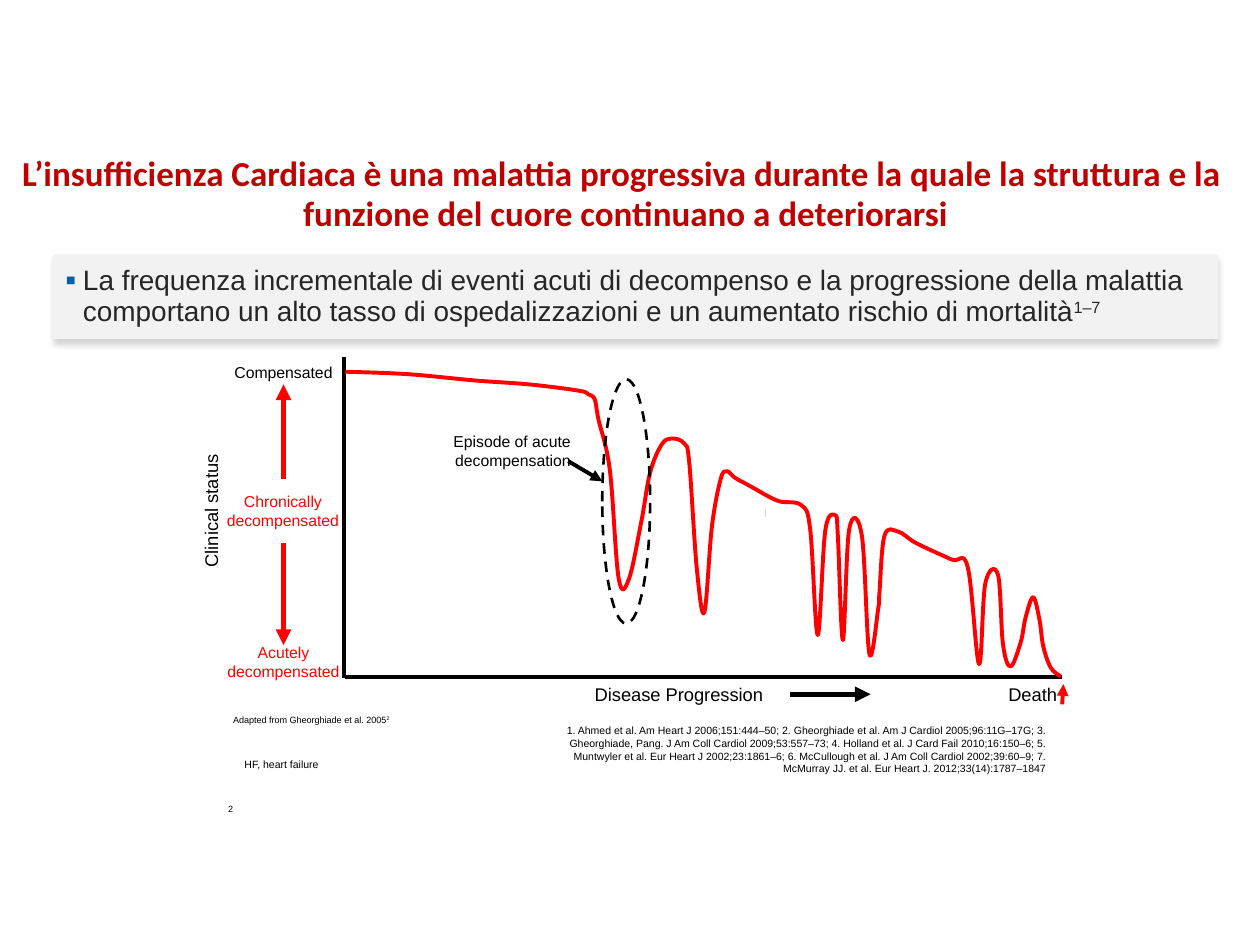
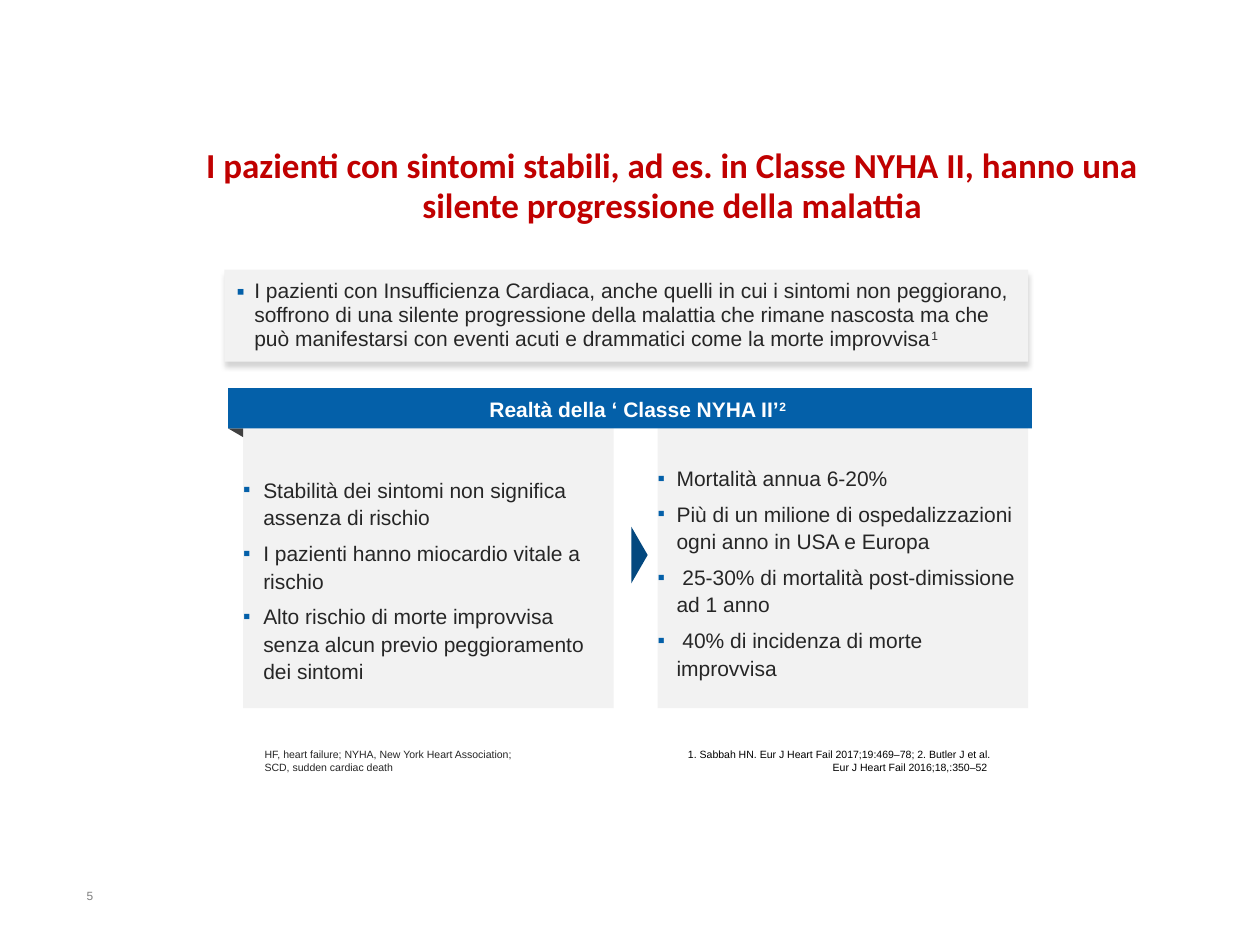
from lxml.etree import SubElement
from pptx import Presentation
from pptx.dml.color import RGBColor
from pptx.enum.dml import MSO_LINE_DASH_STYLE as Dash
from pptx.enum.shapes import MSO_CONNECTOR as Connector, MSO_SHAPE as Shape
from pptx.enum.text import MSO_ANCHOR as Anchor, MSO_AUTO_SIZE as AutoSize, PP_ALIGN as Align
from pptx.oxml.ns import qn
from pptx.util import Pt

PX = 9144
TITLE_ONLY = 5
BLACK, WHITE, RED = "000000", "FFFFFF", "FF0000"
TITLE_RED, BLUE, DARK_BLUE = "C00000", "0460A9", "03487F"
PANEL, INK, FOLD, TICK, NUMBER = "F2F2F2", "262626", "404040", "D9D9D9", "7F7F7F"

CLINICAL_COURSE = [
    (274, 295), (324, 297), (377, 302), (419, 305), (459, 310), (467, 313),
    (472, 317), (475, 333), (484, 373), (491, 459), (499, 460), (509, 414),
    (516, 375), (525, 353), (533, 348), (543, 352), (547, 367), (553, 451),
    (559, 486), (565, 418), (572, 380), (577, 374), (583, 379), (592, 384),
    (601, 389), (608, 393), (619, 398), (636, 401), (643, 420), (649, 504),
    (655, 421), (663, 409), (665, 426), (669, 508), (674, 420), (684, 425),
    (690, 519), (697, 483), (698, 470), (702, 425), (713, 422), (727, 431),
    (755, 444), (768, 450), (777, 527), (782, 463), (792, 456), (796, 511),
    (802, 529), (810, 510), (814, 490), (820, 474), (825, 492), (828, 513),
    (834, 530), (842, 537),
]


def px(*lengths):
    return [round(length * PX) for length in lengths]


def color(hex_code):
    return RGBColor.from_string(hex_code)


def add_bullet(paragraph, indent, percent):
    props = paragraph._p.get_or_add_pPr()
    props.set("marL", str(indent * PX))
    props.set("indent", str(-indent * PX))
    tint = SubElement(props, qn("a:buClr"))
    SubElement(tint, qn("a:srgbClr"), val=BLUE)
    SubElement(props, qn("a:buSzPct"), val=str(percent * 1000))
    SubElement(props, qn("a:buFont"), typeface="Arial")
    SubElement(props, qn("a:buChar"), char="▪")


def write(shape, text, size=9, hex_code=BLACK, font="Arial", bold=False,
          align=Align.LEFT, anchor=Anchor.TOP, margins=(0, 0), spacing=None,
          before=0, first_indent=0, bullet=0, bullet_percent=100):
    """Newline starts a paragraph, \\v breaks a line, ^ starts a superscript."""
    frame = shape.text_frame
    frame.word_wrap = True
    frame.auto_size = AutoSize.NONE
    frame.vertical_anchor = anchor
    frame.margin_left, frame.margin_top = px(*margins)
    frame.margin_right, frame.margin_bottom = px(*margins)
    for index, content in enumerate(text.split("\n")):
        paragraph = frame.add_paragraph() if index else frame.paragraphs[0]
        if bullet:
            add_bullet(paragraph, bullet, bullet_percent)
        elif first_indent:
            paragraph._p.get_or_add_pPr().set("indent", str(first_indent * PX))
        paragraph.alignment = align
        if spacing:
            paragraph.line_spacing = spacing
        if index:
            paragraph.space_before = Pt(before)
        for line_index, line in enumerate(content.split("\v")):
            if line_index:
                paragraph.add_line_break()
            for raised, part in enumerate(line.split("^")):
                run = paragraph.add_run()
                run.text = part
                run.font.size = Pt(size)
                run.font.name = font
                run.font.bold = bold
                run.font.color.rgb = color(hex_code)
                if raised:
                    run._r.get_or_add_rPr().set("baseline", "30000")


def add_label(slide, box, text, **style):
    label = slide.shapes.add_textbox(*px(*box))
    write(label, text, **style)
    return label


def add_title(slide, box, text):
    title = slide.shapes.title
    title.left, title.top, title.width, title.height = px(*box)
    write(title, text, size=20, hex_code=TITLE_RED, font="Calibri", bold=True,
          align=Align.CENTER, spacing=0.95)


def add_block(slide, box, fill, kind=Shape.RECTANGLE):
    block = slide.shapes.add_shape(kind, *px(*box))
    block.shadow.inherit = False
    block.fill.solid()
    block.fill.fore_color.rgb = color(fill)
    block.line.fill.background()
    return block


def add_key_message(slide, box, text, size):
    panel = add_block(slide, box, PANEL)
    effects = panel._element.spPr.find(qn("a:effectLst"))
    shadow = SubElement(effects, qn("a:outerShdw"), blurRad=str(Pt(3)), dist=str(Pt(3)),
                        dir="5400000", algn="t", rotWithShape="0")
    tint = SubElement(shadow, qn("a:srgbClr"), val=BLACK)
    SubElement(tint, qn("a:alpha"), val="16000")
    write(panel, text, size=size, hex_code=INK, margins=(10, 8), spacing=0.95,
          bullet=14, bullet_percent=110)


def add_line(slide, start, end, hex_code, width, arrow=False):
    line = slide.shapes.add_connector(Connector.STRAIGHT, *px(*start, *end))
    line.line.color.rgb = color(hex_code)
    line.line.width = Pt(width)
    if arrow:
        SubElement(line.line._get_or_add_ln(), qn("a:tailEnd"), type="triangle")
    SubElement(line._element.spPr, qn("a:effectLst"))


def add_outline(slide, points, close):
    start, *others = [px(*point) for point in points]
    builder = slide.shapes.build_freeform(*start)
    builder.add_line_segments(others, close=close)
    outline = builder.convert_to_shape()
    outline.shadow.inherit = False
    return outline


def smooth(outline):
    knots = [(int(pt.get("x")), int(pt.get("y"))) for pt in outline._element.iter(qn("a:pt"))]
    padded = [knots[0], *knots, knots[-1]]
    segments = list(outline._element.iter(qn("a:lnTo")))
    for segment, a, b, c, d in zip(segments, padded, padded[1:], padded[2:], padded[3:]):
        leaving = [q + (r - p) / 6 for p, q, r in zip(a, b, c)]
        arriving = [q - (r - p) / 6 for p, q, r in zip(b, c, d)]
        curve = segment.makeelement(qn("a:cubicBezTo"))
        for x, y in (leaving, arriving, c):
            SubElement(curve, qn("a:pt"), x=str(round(x)), y=str(round(y)))
        segment.getparent().replace(segment, curve)


def add_progression_diagram(slide):
    padded = {"margins": (4, 4)}
    status = add_label(slide, (78, 393, 178, 25), "Clinical status", size=10.5,
                       align=Align.CENTER, **padded)
    status.rotation = 270
    add_label(slide, (468, 538, 172, 25), "Disease Progression", size=10.5, **padded)
    add_label(slide, (741, 538, 102, 25), "Death", size=10.5, align=Align.RIGHT, **padded)
    for box, stage, hex_code in [
        ((171, 284, 108, 23), "Compensated", BLACK),
        ((160, 386, 129, 38), "Chronically\ndecompensated", RED),
        ((171, 506, 108, 38), "Acutely\ndecompensated", RED),
    ]:
        add_label(slide, box, stage, hex_code=hex_code, align=Align.CENTER, **padded)

    add_line(slide, (274, 537), (843, 537), BLACK, 2.25)
    add_line(slide, (273, 538), (273, 283), BLACK, 2.25)
    add_block(slide, (607, 404, 1, 6), TICK)
    course = add_outline(slide, CLINICAL_COURSE, close=False)
    smooth(course)
    course.fill.background()
    course.line.color.rgb = color(RED)
    course.line.width = Pt(2.25)

    episode = add_block(slide, (478, 301, 38, 194), WHITE, Shape.OVAL)
    episode.fill.background()
    episode.line.color.rgb = color(BLACK)
    episode.line.width = Pt(1.5)
    episode.line.dash_style = Dash.DASH
    add_label(slide, (333, 339, 124, 38), "Episode of acute decompensation",
              align=Align.RIGHT, **padded)

    for start, end, hex_code, width in [
        ((225, 380), (225, 305), RED, 3),
        ((225, 431), (225, 512), RED, 3),
        ((627, 551), (691, 551), BLACK, 3),
        ((843, 559), (844, 543), RED, 2.25),
        ((451, 366), (478, 382), BLACK, 2.25),
    ]:
        add_line(slide, start, end, hex_code, width, arrow=True)
    add_label(slide, (181, 563, 225, 16), "Adapted from Gheorghiade et al. 2005^2",
              size=5.2, **padded)


def build_progression_slide(slide):
    add_title(slide, (0, 123, 993, 79),
              "L’insufficienza Cardiaca è una malattia progressiva durante la quale la "
              "struttura e la \vfunzione del cuore continuano a deteriorarsi")
    add_key_message(slide, (42, 202, 925, 67),
                    "La frequenza incrementale di eventi acuti di decompenso e la progressione "
                    "della malattia comportano un alto tasso di ospedalizzazioni e un aumentato "
                    "rischio di mortalità^1–7", 16)
    add_progression_diagram(slide)
    add_label(slide, (194, 602, 231, 10), "HF, heart failure", size=6)
    add_label(slide, (441, 575, 389, 40),
              "1. Ahmed et al. Am Heart J 2006;151:444–50; 2. Gheorghiade et al. Am J Cardiol "
              "2005;96:11G–17G; 3. Gheorghiade, Pang. J Am Coll Cardiol 2009;53:557–73; "
              "4. Holland et al. J Card Fail 2010;16:150–6; 5. Muntwyler et al. Eur Heart J "
              "2002;23:1861–6; 6. McCullough et al. J Am Coll Cardiol 2002;39:60–9; "
              "7. McMurray JJ. et al. Eur Heart J. 2012;33(14):1787–1847",
              size=6, align=Align.RIGHT)
    add_label(slide, (181, 638, 19, 9), "2", size=5.2)


def build_nyha_slide(slide):
    add_title(slide, (146, 116, 775, 79),
              "I pazienti con sintomi stabili, ad es. in Classe NYHA II, hanno una silente "
              "progressione della malattia")
    add_key_message(slide, (178, 214, 638, 73),
                    "I pazienti con Insufficienza Cardiaca, anche quelli in cui i sintomi non "
                    "peggiorano, soffrono di una silente progressione della malattia che rimane "
                    "nascosta ma che può manifestarsi con eventi acuti e drammatici come la "
                    "morte improvvisa^1", 12)

    for left, bottom, indent, facts in [
        (193, 543, 16, "Stabilità dei sintomi non significa assenza di rischio\n"
                       "I pazienti hanno miocardio vitale a rischio\n"
                       "Alto rischio di morte improvvisa senza alcun previo peggioramento "
                       "dei sintomi"),
        (522, 540, 15, "Mortalità annua 6-20%\n"
                       "Più di un milione di ospedalizzazioni ogni anno in USA e Europa\n"
                       " 25-30% di mortalità post-dimissione ad 1 anno\n"
                       " 40% di incidenza di morte improvvisa"),
    ]:
        add_block(slide, (left, 320, 294, 242), PANEL)
        add_label(slide, (left, 338, 294, bottom - 338), facts, size=12, hex_code=INK,
                  anchor=Anchor.BOTTOM, spacing=1.1, before=4.5, bullet=indent)

    fold = add_outline(slide, [(181, 340), (193, 340), (193, 347)], close=True)
    fold.fill.solid()
    fold.fill.fore_color.rgb = color(FOLD)
    fold.line.fill.background()
    add_block(slide, (181, 308, 638, 32), BLUE)
    add_label(slide, (181, 315, 638, 20), "Realtà della ‘ Classe NYHA II’^2 ", size=12,
              hex_code=WHITE, bold=True, align=Align.CENTER, anchor=Anchor.MIDDLE,
              first_indent=15)
    pointer = add_block(slide, (485, 434, 45, 13), DARK_BLUE, Shape.ISOSCELES_TRIANGLE)
    pointer.rotation = 90

    add_label(slide, (210, 594, 231, 20),
              "HF, heart failure; NYHA, New York Heart Association; \vSCD, sudden cardiac death",
              size=6, hex_code=INK)
    add_label(slide, (536, 594, 250, 20),
              "1. Sabbah HN. Eur J Heart Fail 2017;19:469–78; 2. Butler J et al. "
              "Eur J Heart Fail 2016;18,:350–52 ", size=6, align=Align.RIGHT)
    add_label(slide, (59, 700, 44, 27), "5", size=6.8, hex_code=NUMBER, margins=(10, 5))


def main():
    deck = Presentation()
    deck.slide_width, deck.slide_height = px(1000, 750)
    for build_slide in (build_progression_slide, build_nyha_slide):
        build_slide(deck.slides.add_slide(deck.slide_layouts[TITLE_ONLY]))
    deck.save("out.pptx")


if __name__ == "__main__":
    main()
